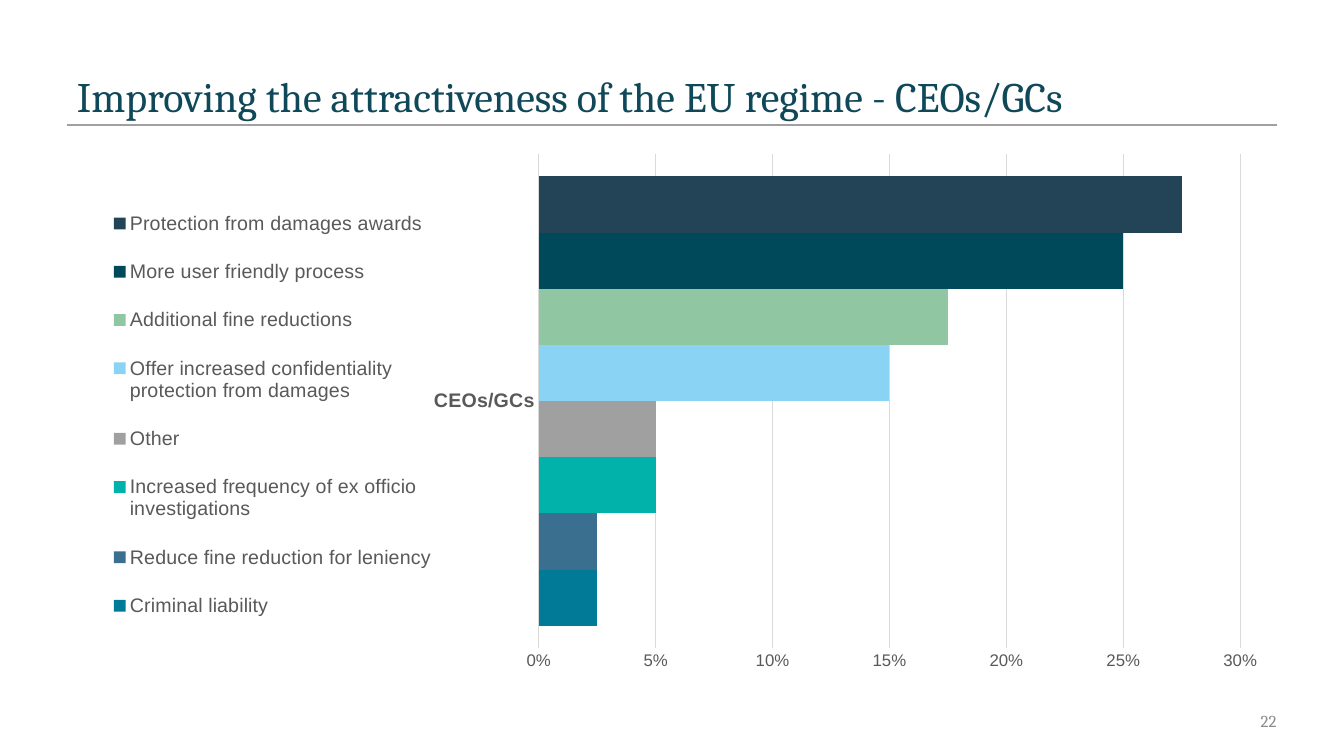
from dataclasses import dataclass
from lxml import etree
from pptx import Presentation
from pptx.chart.data import CategoryChartData
from pptx.dml.color import RGBColor
from pptx.enum.chart import XL_CHART_TYPE, XL_LEGEND_POSITION, XL_TICK_MARK
from pptx.enum.shapes import MSO_CONNECTOR
from pptx.enum.text import MSO_ANCHOR, PP_ALIGN
from pptx.oxml.ns import qn
from pptx.util import Cm, Pt

BAR = XL_CHART_TYPE.BAR_CLUSTERED
LEFT = XL_LEGEND_POSITION.LEFT
NONE = XL_TICK_MARK.NONE
LINE = MSO_CONNECTOR.STRAIGHT
MIDDLE, BOTTOM = MSO_ANCHOR.MIDDLE, MSO_ANCHOR.BOTTOM
START, END = PP_ALIGN.LEFT, PP_ALIGN.RIGHT


@dataclass
class Theme:
    serif: str = "Cambria"
    sans: str = "Arial"
    title: str = "0F4859"
    rule: str = "A0A0A0"
    page: str = "8C8C8C"
    label: str = "595959"
    grid: str = "D9D9D9"
    big: int = 30
    mid: int = 14
    small: int = 12


theme = Theme()


def style(font, name, size, color, bold=False):
    font.name, font.size, font.bold = name, Pt(size), bold
    font.color.rgb = RGBColor.from_string(color)


def place(parent, index, box, inner=False):
    for old in parent.findall(qn("c:layout")):
        parent.remove(old)
    layout = etree.Element(qn("c:layout"))
    manual = etree.SubElement(layout, qn("c:manualLayout"))
    pairs = [("layoutTarget", "inner")] if inner else []
    pairs += [("xMode", "edge"), ("yMode", "edge"), *zip("xywh", box)]
    for tag, value in pairs:
        etree.SubElement(manual, qn("c:" + tag)).set("val", str(value))
    parent.insert(index, layout)


deck = Presentation()
deck.slide_width, deck.slide_height = Cm(33.87), Cm(19.05)
slide = deck.slides.add_slide(deck.slide_layouts[6])
shapes = slide.shapes
left, width = Cm(1.69), Cm(30.48)

rule = shapes.add_connector(LINE, left, Cm(3.15), left + width, Cm(3.15))
rule.line.color.rgb = RGBColor.from_string(theme.rule)
rule.line.width = Pt(1)
etree.SubElement(rule._element.spPr, qn("a:effectLst"))

texts = [
    ("Improving the attractiveness of the EU regime - CEOs/GCs",
     1.69, 1.47, 30.48, 1.7, BOTTOM, START, 0.25, theme.big, theme.title),
    ("22", 24.55, 17.65, 7.62, 1.02, MIDDLE, END, 0, theme.small, theme.page),
]
for text, x, y, w, h, anchor, align, inset, size, color in texts:
    frame = shapes.add_textbox(Cm(x), Cm(y), Cm(w), Cm(h)).text_frame
    frame.word_wrap = True
    frame.vertical_anchor = anchor
    frame.margin_right = Cm(inset)
    para = frame.paragraphs[0]
    para.text, para.alignment = text, align
    style(para.font, theme.serif, size, color)

bars = [
    ("Criminal liability", 0.025, "007A96"),
    ("Reduce fine reduction for leniency", 0.025, "3A6F8F"),
    ("Increased frequency of ex officio investigations", 0.05, "00B2A9"),
    ("Other", 0.05, "A0A0A0"),
    ("Offer increased confidentiality protection from damages", 0.15, "8BD3F5"),
    ("Additional fine reductions", 0.175, "90C6A2"),
    ("More user friendly process", 0.25, "00495A"),
    ("Protection from damages awards", 0.275, "234356"),
]
data = CategoryChartData(number_format="0.0%")
data.categories = ["CEOs/GCs"]
for name, value, color in bars:
    data.add_series(name, [value])
chart = shapes.add_chart(BAR, left, Cm(3.61), width, Cm(13.54), data).chart
chart.has_title = False
style(chart.font, theme.sans, theme.small, theme.label)

plot = chart.plots[0]
plot.gap_width, plot.overlap = 80, 0
plot.vary_by_categories = False
for series, (name, value, color) in zip(plot.series, bars):
    series.format.fill.solid()
    series.format.fill.fore_color.rgb = RGBColor.from_string(color)

cats, vals = chart.category_axis, chart.value_axis
for axis in (cats, vals):
    axis.major_tick_mark = axis.minor_tick_mark = NONE
style(cats.tick_labels.font, theme.sans, theme.mid, theme.label, True)
style(vals.tick_labels.font, theme.sans, theme.small, theme.label)
vals.minimum_scale, vals.maximum_scale, vals.major_unit = 0, 0.3, 0.05
vals.tick_labels.number_format = "0%"
vals.tick_labels.number_format_is_linked = False
vals.format.line.fill.background()
for line in (cats.format.line, vals.major_gridlines.format.line):
    line.color.rgb = RGBColor.from_string(theme.grid)
    line.width = Pt(0.75)

chart.has_legend = True
legend = chart.legend
legend.position = LEFT
legend.include_in_layout = False
style(legend.font, theme.sans, theme.mid, theme.label)
place(legend._element, 1, (0.03, 0.08, 0.28, 0.85))
place(chart._chartSpace.chart.plotArea, 0, (0.39, 0.02, 0.58, 0.92), True)

deck.save("out.pptx")
